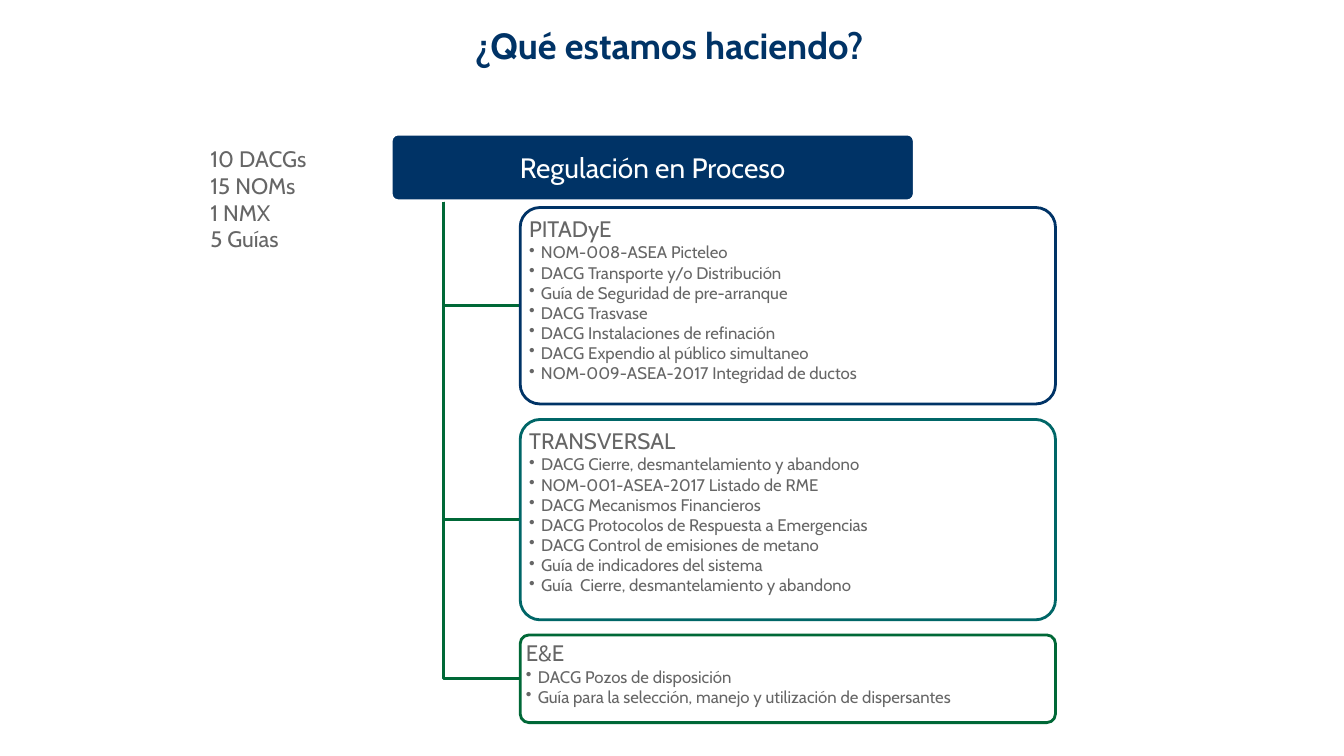
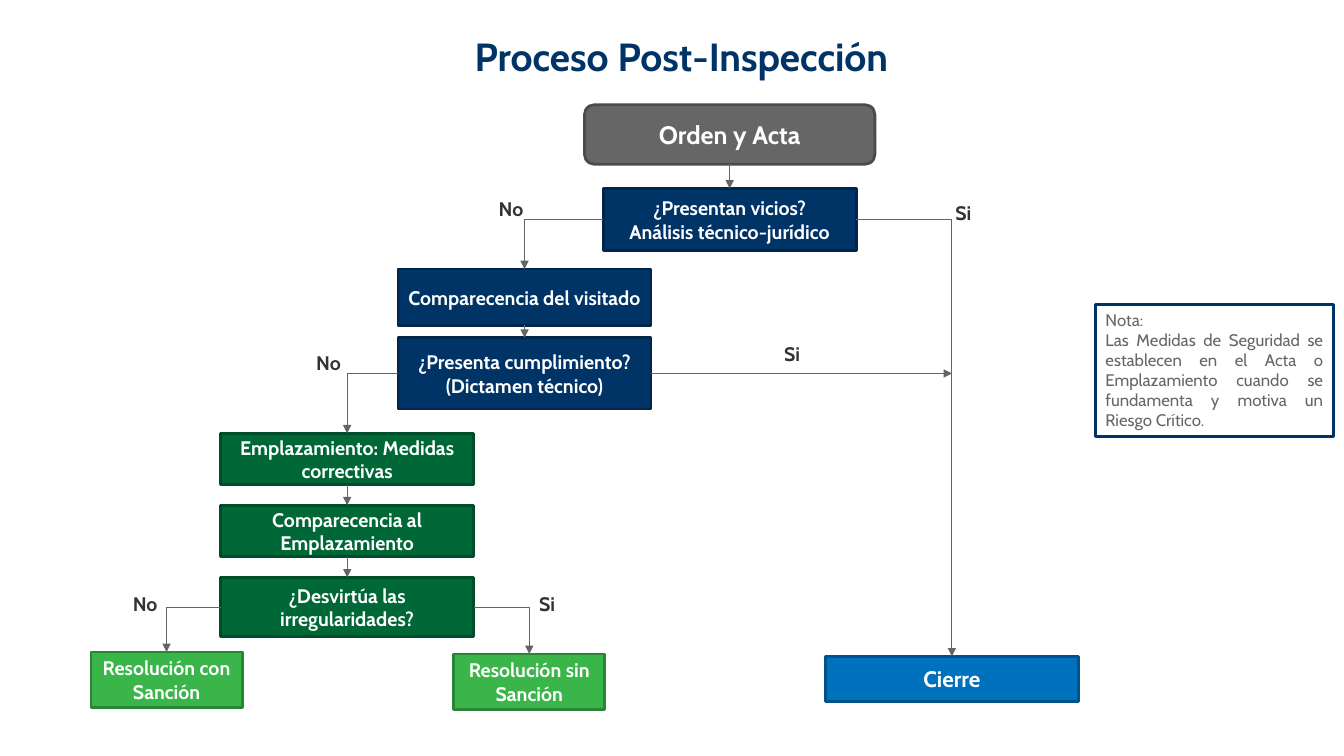
from lxml import etree
from pptx import Presentation
from pptx.dml.color import RGBColor
from pptx.enum.shapes import MSO_CONNECTOR, MSO_SHAPE
from pptx.enum.text import MSO_ANCHOR, MSO_AUTO_SIZE, PP_ALIGN
from pptx.oxml.ns import qn
from pptx.util import Cm, Pt

RECT, ROUND = MSO_SHAPE.RECTANGLE, MSO_SHAPE.ROUNDED_RECTANGLE
STRAIGHT, ELBOW = MSO_CONNECTOR.STRAIGHT, MSO_CONNECTOR.ELBOW
LEFT, CENTER, JUSTIFY = PP_ALIGN.LEFT, PP_ALIGN.CENTER, PP_ALIGN.JUSTIFY
TOP, MIDDLE = MSO_ANCHOR.TOP, MSO_ANCHOR.MIDDLE
FIXED = MSO_AUTO_SIZE.NONE
SITE_TOP, SITE_LEFT, SITE_BASE, SITE_RIGHT = range(4)

FONT = "Cabin"
NAVY, TEAL, GREEN, LIME, BLUE = "003366", "006667", "006837", "39B54A", "0071BC"
WHITE, GREY, WIRE, INK = "FFFFFF", "666666", "646464", "333333"
EDGE = {NAVY: "00264B", GREEN: "004D29", LIME: "2A8637", BLUE: "00548B", GREY: "4B4B4B"}

PANELS = [
    (1.85, 4.95, NAVY, "PITADyE", [
        "NOM-008-ASEA Picteleo",
        "DACG Transporte y/o Distribución",
        "Guía de Seguridad de pre-arranque",
        "DACG Trasvase",
        "DACG Instalaciones de refinación",
        "DACG Expendio al público simultaneo",
        "NOM-009-ASEA-2017 Integridad de ductos"]),
    (7.19, 5.05, TEAL, "TRANSVERSAL", [
        "DACG Cierre, desmantelamiento y abandono",
        "NOM-001-ASEA-2017 Listado de RME",
        "DACG Mecanismos Financieros",
        "DACG Protocolos de Respuesta a Emergencias",
        "DACG Control de emisiones de metano",
        "Guía de indicadores del sistema",
        "Guía  Cierre, desmantelamiento y abandono"]),
    (12.62, 2.21, GREEN, "E&E", [
        "DACG Pozos de disposición",
        "Guía para la selección, manejo y utilización de dispersantes"]),
]

NODES = {
    "order": (16.1, 0, 7.32, 1.5, GREY, 18, "Orden y Acta"),
    "flaws": (16.1, 2.11, 6.38, 1.57, NAVY, 14,
              "¿Presentan vicios?\nAnálisis técnico-jurídico"),
    "visit": (10.93, 4.14, 6.38, 1.42, NAVY, 14, "Comparecencia del visitado"),
    "check": (10.93, 5.87, 6.38, 1.8, NAVY, 14,
              "¿Presenta cumplimiento?\n(Dictamen técnico)"),
    "summon": (6.46, 8.28, 6.38, 1.3, GREEN, 14, "Emplazamiento: Medidas correctivas"),
    "appear": (6.46, 10.09, 6.38, 1.3, GREEN, 14, "Comparecencia al Emplazamiento"),
    "refute": (6.46, 11.91, 6.38, 1.5, GREEN, 14, "¿Desvirtúa las irregularidades?"),
    "fined": (1.91, 13.79, 3.81, 1.4, LIME, 14, "Resolución con Sanción"),
    "clear": (11.05, 13.84, 3.81, 1.4, LIME, 14, "Resolución sin Sanción"),
    "close": (21.7, 13.9, 6.38, 1.14, BLUE, 16, "Cierre"),
}
STEPS = [("order", "flaws"), ("visit", "check"), ("summon", "appear"), ("appear", "refute")]
TURNS = [
    ("flaws", SITE_LEFT, "visit"),
    ("flaws", SITE_RIGHT, "close"),
    ("check", SITE_LEFT, "summon"),
    ("refute", SITE_LEFT, "fined"),
    ("refute", SITE_RIGHT, "clear"),
]
LABELS = [
    (10.59, 2.19, "No"), (5.99, 6.07, "No"), (17.67, 5.84, "Si"),
    (1.37, 12.14, "No"), (11.5, 12.14, "Si"), (21.99, 2.31, "Si"),
]


def rgb(code):
    """Turn a hex string into a colour."""
    return RGBColor.from_string(code)


def style(para, size, color, bold=False, align=LEFT):
    """Format a whole paragraph."""
    para.alignment = align
    font = para.font
    font.name, font.size, font.bold = FONT, Pt(size), bold
    font.color.rgb = rgb(color)


def write(shape, text, size, color, bold=False, align=CENTER, anchor=MIDDLE, wrap=True):
    """Fill a shape with one paragraph per line of text."""
    frame = shape.text_frame
    frame.auto_size, frame.word_wrap = FIXED, wrap
    frame.vertical_anchor = anchor
    for i, line in enumerate(text.split("\n")):
        para = frame.add_paragraph() if i else frame.paragraphs[0]
        para.text = line
        style(para, size, color, bold, align)
    return frame


def inset(frame, x, y):
    """Set the inner margins of a text frame."""
    frame.margin_left = frame.margin_right = Cm(x)
    frame.margin_top = frame.margin_bottom = Cm(y)


def block(slide, kind, box, fill, edge):
    """Add a filled and outlined shape."""
    shape = slide.shapes.add_shape(kind, *map(Cm, box))
    shape.shadow.inherit = False
    shape.fill.solid()
    shape.fill.fore_color.rgb = rgb(fill)
    shape.line.color.rgb = rgb(edge)
    shape.line.width = Pt(2)
    return shape


def label(slide, box, text, *args, **kwargs):
    """Add a plain text box."""
    write(slide.shapes.add_textbox(*map(Cm, box)), text, *args, **kwargs)


def head(slide, box, text, size):
    """Place and format the slide title."""
    title = slide.shapes.title
    title.left, title.top, title.width, title.height = map(Cm, box)
    inset(write(title, text, size, NAVY, True), 0, 0)


def bullet(para, text):
    """Turn a paragraph into a bulleted item."""
    para.text = text
    para.level = 1
    props = para._p.get_or_add_pPr()
    props.set("marL", str(Cm(0.3)))
    props.set("indent", str(-Cm(0.3)))
    etree.SubElement(props, qn("a:buChar")).set("char", "•")
    style(para, 12, GREY)


def panel(slide, box, color, name, items):
    """Draw an outlined panel with a heading and bullets."""
    shape = block(slide, ROUND, box, WHITE, color)
    shape.adjustments[0] = 0.1
    frame = write(shape, name, 16, GREY, align=LEFT, anchor=TOP)
    inset(frame, 0.08, 0.05)
    for item in items:
        bullet(frame.add_paragraph(), item)


def branch(slide, x, y, right, base):
    """Draw a line going down and then right."""
    path = slide.shapes.build_freeform(Cm(x), Cm(y))
    path.add_line_segments([(Cm(x), Cm(base)), (Cm(right), Cm(base))], close=False)
    shape = path.convert_to_shape()
    shape.shadow.inherit = False
    shape.fill.background()
    shape.line.color.rgb = rgb(GREEN)
    shape.line.width = Pt(2)


def tree(slide, x, y):
    """Draw the header bar and the panels that hang from it."""
    bar = block(slide, ROUND, (x, y, 13.18, 1.68), NAVY, WHITE)
    bar.adjustments[0] = 0.1
    write(bar, "Regulación en Proceso", 20, WHITE)
    side = x + 3.25
    for top, high, color, name, items in PANELS:
        branch(slide, x + 1.32, y + 1.7, side, y + top + high / 2)
        panel(slide, (side, y + top, 13.49, high), color, name, items)


def arrow(slide, kind, start, site, end=None, point=(0, 0)):
    """Join a shape to the top of another one, or to a point."""
    wire = slide.shapes.add_connector(kind, 0, 0, *point)
    wire.begin_connect(start, site)
    if end is not None:
        wire.end_connect(end, SITE_TOP)
    wire.line.color.rgb = rgb(WIRE)
    wire.line.width = Pt(0.75)
    props = wire.element.spPr
    if kind == ELBOW:
        props.find(qn("a:prstGeom")).set("prst", "bentConnector2")
    etree.SubElement(props.find(qn("a:ln")), qn("a:tailEnd")).set("type", "triangle")
    etree.SubElement(props, qn("a:effectLst"))


def flow(slide, x, y):
    """Draw the flow chart with its arrows and answers."""
    made = {}
    for key, (mid, top, wide, high, fill, size, text) in NODES.items():
        kind = ROUND if key == "order" else RECT
        box = (x + mid - wide / 2, y + top, wide, high)
        made[key] = block(slide, kind, box, fill, EDGE[fill])
        write(made[key], text, size, WHITE, True)
    for start, end in STEPS:
        arrow(slide, STRAIGHT, made[start], SITE_BASE, made[end])
    for start, site, end in TURNS:
        arrow(slide, ELBOW, made[start], site, made[end])
    check, close = made["check"], made["close"]
    point = (close.left + close.width // 2, check.top + check.height // 2)
    arrow(slide, STRAIGHT, check, SITE_RIGHT, point=point)
    for mid, top, text in LABELS:
        label(slide, (x + mid - 0.99, y + top, 1.98, 0.86), text, 14, INK, True, anchor=TOP)


def note(slide, box):
    """Draw the framed note."""
    text = ("Nota:\nLas Medidas de Seguridad se establecen en el Acta o Emplazamiento "
            "cuando se fundamenta y motiva un Riesgo Crítico.")
    write(block(slide, RECT, box, WHITE, NAVY), text, 12, GREY, align=JUSTIFY, anchor=TOP)


def main():
    """Build and save both slides."""
    deck = Presentation()
    deck.slide_width, deck.slide_height = Cm(33.87), Cm(19.05)
    plain = deck.slide_layouts.get_by_name("Title Only")

    rules = deck.slides.add_slide(plain)
    head(rules, (10.24, 0.25, 13.26, 1.75), "¿Qué estamos haciendo?", 26)
    tree(rules, 9.86, 3.38)
    label(rules, (5.05, 3.53, 3.43, 3), "10 DACGs\n15 NOMs\n1 NMX\n5 Guías", 16, GREY,
          align=LEFT, anchor=TOP, wrap=False)

    steps = deck.slides.add_slide(plain)
    head(steps, (2.08, 0.36, 30.18, 2.08), "Proceso Post-Inspección", 28)
    flow(steps, 2.29, 2.64)
    note(steps, (27.61, 7.67, 5.99, 3.33))
    deck.save("out.pptx")


if __name__ == "__main__":
    main()
